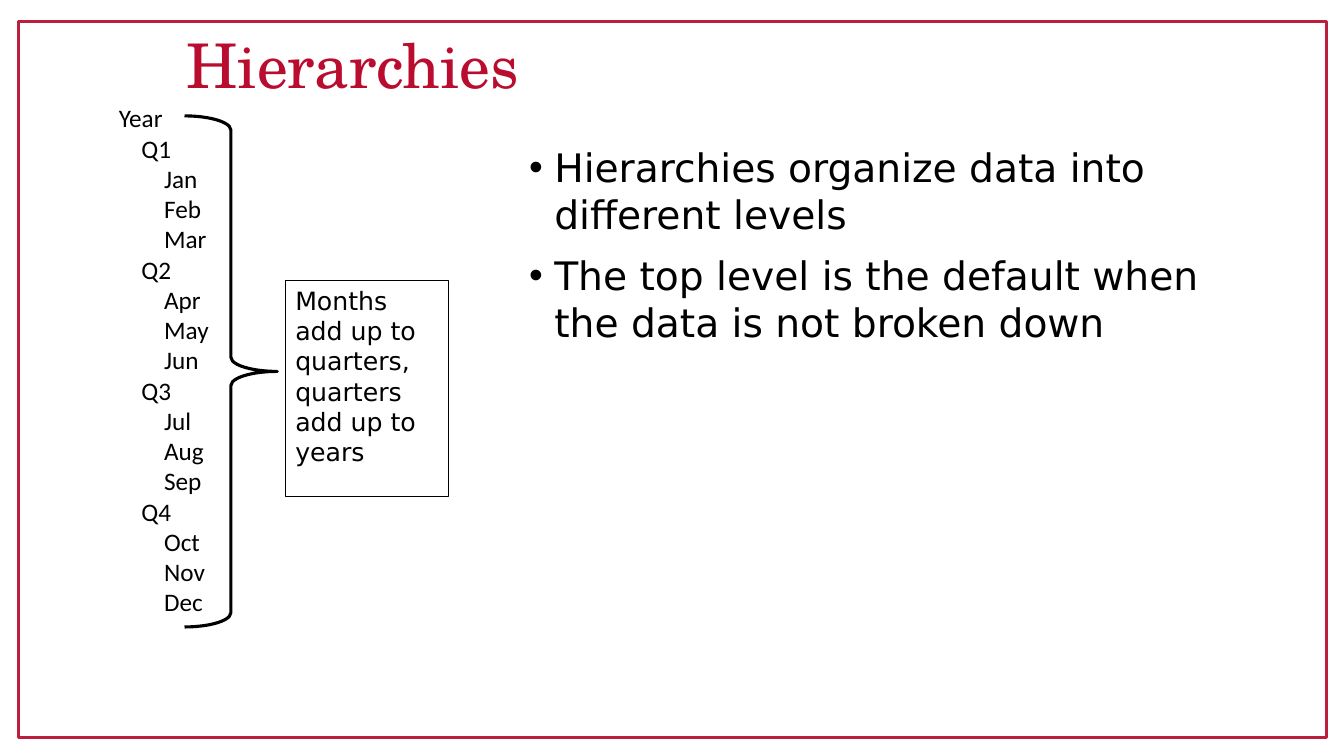
from dataclasses import dataclass

from lxml import etree
from pptx import Presentation
from pptx import util as u
from pptx.dml.color import RGBColor
from pptx.enum import shapes, text
from pptx.oxml import ns

BLACK = RGBColor(0x00, 0x00, 0x00)
WHITE = RGBColor(0xFF, 0xFF, 0xFF)
CRIMSON = RGBColor(0xBA, 0x0C, 0x2F)
FRAME_RED = RGBColor(0xBC, 0x1E, 0x3E)
LEVEL_INDENT = 0.225
BULLET_INDENT = 0.25


@dataclass(frozen=True)
class Box:
    left: float
    top: float
    width: float
    height: float

    def lengths(self) -> tuple:
        return tuple(u.Inches(n) for n in (self.left, self.top, self.width, self.height))


@dataclass(frozen=True)
class Style:
    font: str
    size: float
    color: RGBColor = BLACK
    exact: bool = True
    space_before: float = 0


@dataclass(frozen=True)
class Line:
    words: str
    indent: float = 0
    bullet: bool = False


TITLE = Style("TeX Gyre Schola", 44, CRIMSON, exact=False)
BODY = Style("DejaVu Sans", 28, space_before=10)
NOTE = Style("DejaVu Sans", 18)
TREE = Style("Calibri", 18)

QUARTERS = {
    "Q1": ("Jan", "Feb", "Mar"),
    "Q2": ("Apr", "May", "Jun"),
    "Q3": ("Jul", "Aug", "Sep"),
    "Q4": ("Oct", "Nov", "Dec"),
}
POINTS = (
    "Hierarchies organize data into different levels",
    "The top level is the default when the data is not broken down",
)


def calendar_lines() -> list[Line]:
    lines = [Line("Year")]
    for quarter, months in QUARTERS.items():
        lines.append(Line(quarter, LEVEL_INDENT))
        lines.extend(Line(month, 2 * LEVEL_INDENT) for month in months)
    return lines


def write(frame, lines: list[Line], style: Style, anchor=text.MSO_ANCHOR.TOP) -> None:
    frame.word_wrap = True
    frame.vertical_anchor = anchor
    for index, line in enumerate(lines):
        paragraph = frame.add_paragraph() if index else frame.paragraphs[0]
        paragraph.alignment = text.PP_ALIGN.LEFT
        paragraph.line_spacing = u.Pt(1.2 * style.size) if style.exact else 0.9
        if index:
            paragraph.space_before = u.Pt(style.space_before)
        properties = paragraph._p.get_or_add_pPr()
        properties.set("marL", str(u.Inches(line.indent)))
        if line.bullet:
            properties.set("indent", str(-u.Inches(line.indent)))
            etree.SubElement(properties, ns.qn("a:buFont"), typeface="Arial")
            etree.SubElement(properties, ns.qn("a:buChar"), char="•")
        run = paragraph.add_run()
        run.text = line.words
        run.font.name = style.font
        run.font.size = u.Pt(style.size)
        run.font.color.rgb = style.color


def add_text(slide, box: Box, lines: list[Line], style: Style,
             anchor=text.MSO_ANCHOR.TOP) -> None:
    write(slide.shapes.add_textbox(*box.lengths()).text_frame, lines, style, anchor)


def add_outline(slide, kind, box: Box, color: RGBColor, weight: float):
    outline = slide.shapes.add_shape(kind, *box.lengths())
    outline.shadow.inherit = False
    outline.fill.background()
    outline.line.color.rgb = color
    outline.line.width = u.Pt(weight)
    return outline


def main() -> None:
    deck = Presentation()
    deck.slide_width, deck.slide_height = u.Inches(13.33), u.Inches(7.5)
    slide = deck.slides.add_slide(deck.slide_layouts[6])
    rectangle = shapes.MSO_SHAPE.RECTANGLE

    add_outline(slide, rectangle, Box(0.18, 0.21, 12.98, 7.11), FRAME_RED, 2)
    add_text(slide, Box(1.75, 0.22, 11.5, 0.93), [Line("Hierarchies")], TITLE,
             text.MSO_ANCHOR.MIDDLE)
    add_text(slide, Box(5.15, 1.37, 7.26, 5.07),
             [Line(point, BULLET_INDENT, bullet=True) for point in POINTS], BODY)

    months_note = add_outline(slide, rectangle, Box(2.83, 2.78, 1.62, 2.14), BLACK, 0.5)
    months_note.fill.solid()
    months_note.fill.fore_color.rgb = WHITE
    write(months_note.text_frame,
          [Line("Months add up to quarters, quarters add up to years")], NOTE)

    year_brace = add_outline(slide, shapes.MSO_SHAPE.RIGHT_BRACE,
                             Box(1.83, 1.15, 0.92, 5.07), BLACK, 2.25)
    year_brace.adjustments[0] = 0.153
    year_brace.adjustments[1] = 0.5
    add_text(slide, Box(1.08, 0.97, 3.16, 5.25), calendar_lines(), TREE)

    deck.save("out.pptx")


if __name__ == "__main__":
    main()
